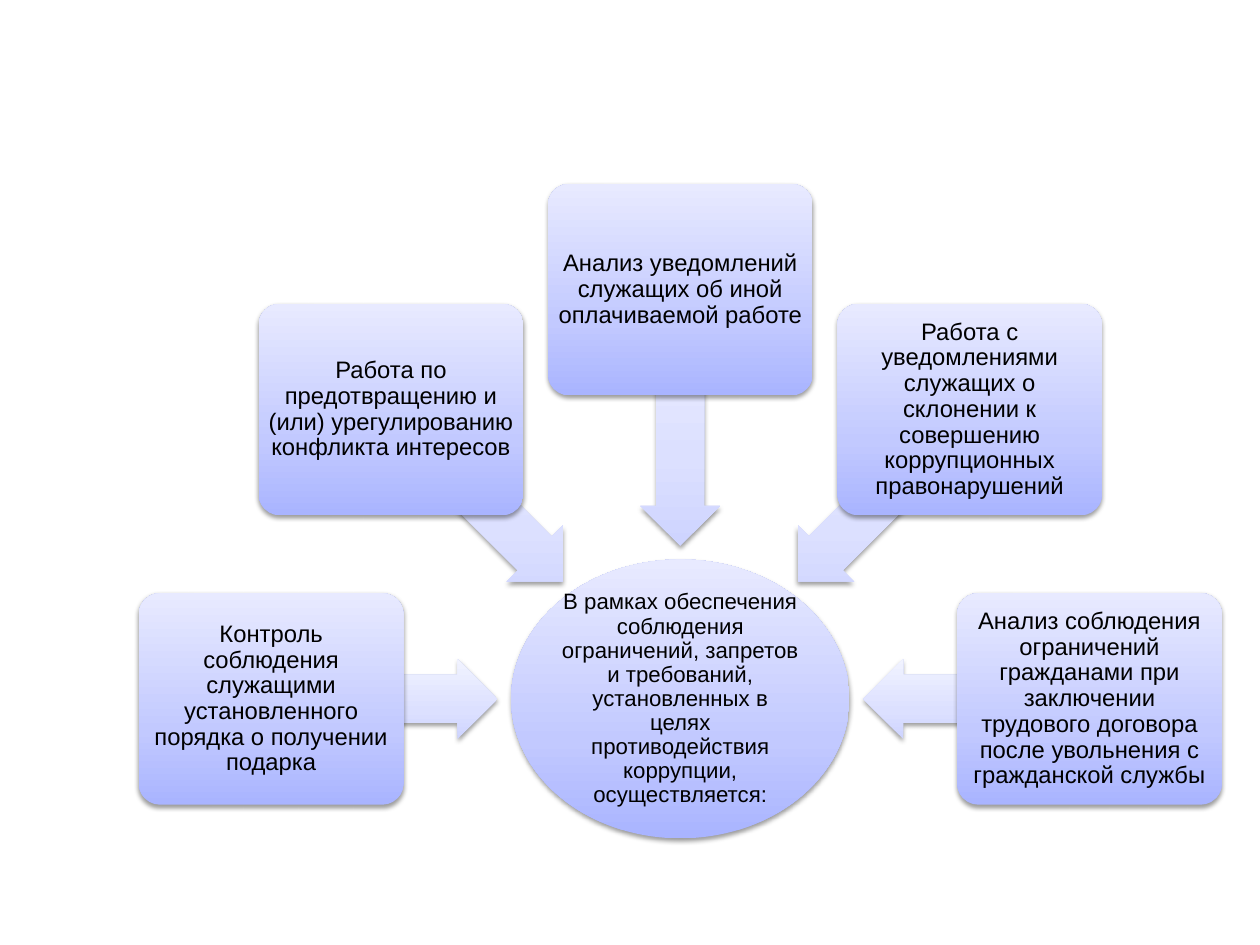
"""Builds a slide of five duties that converge on one central purpose."""
from dataclasses import dataclass
from math import cos, hypot, radians, sin

from lxml import etree
from pptx import Presentation
from pptx import util as u
from pptx.dml.color import RGBColor
from pptx.enum import shapes, text
from pptx.oxml import ns

SLIDE_WIDTH, SLIDE_HEIGHT = u.Cm(28), u.Cm(21)
CELL = u.Inches(0.1)
HUB_X, HUB_Y = 59.52, 61.15
HUB_SIZE = (29.6, 24.4)
CARD_SIZE = (23.16, 18.5)
ORBIT = 35.8
ARROW_HEIGHT = 7
ARROW_GAP = 1.2

PURPOSE = (
    "В рамках обеспечения соблюдения ограничений, запретов и требований, "
    "установленных в целях противодействия коррупции, осуществляется:"
)
DUTIES = (
    "Контроль соблюдения служащими установленного порядка о получении подарка",
    "Работа по предотвращению и (или) урегулированию конфликта интересов",
    "Анализ уведомлений служащих об иной оплачиваемой работе",
    "Работа с уведомлениями служащих о склонении к совершению "
    "коррупционных правонарушений",
    "Анализ соблюдения ограничений гражданами при заключении трудового "
    "договора после увольнения с гражданской службы",
)


@dataclass(frozen=True)
class Theme:
    """Colours and type of the slide."""

    font: str = "Arial"
    ink: str = "000000"
    hub_size: int = 14
    card_size: int = 15
    solid: tuple = ("A9B4FF", "C2C9FF", "E8EAFF")
    pale: tuple = ("CED4FF", "DCE0FF", "F1F3FF")
    stops: tuple = (0, 35, 100)


THEME = Theme()


def add_effects(shape, colours):
    """Give a shape an upward gradient and a soft shadow below it."""
    stops = "".join(
        f'<a:gs pos="{stop * 1000}"><a:srgbClr val="{colour}"/></a:gs>'
        for stop, colour in zip(THEME.stops, colours)
    )
    gradient = (
        f'<a:gradFill {ns.nsdecls("a")} rotWithShape="0">'
        f'<a:gsLst>{stops}</a:gsLst><a:lin ang="16200000" scaled="0"/></a:gradFill>'
    )
    shadow = (
        f'<a:effectLst {ns.nsdecls("a")}>'
        f'<a:outerShdw blurRad="{u.Pt(3.1)}" dist="{u.Pt(1.6)}" dir="5400000" '
        f'rotWithShape="0"><a:srgbClr val="{THEME.ink}"><a:alpha val="38000"/>'
        "</a:srgbClr></a:outerShdw></a:effectLst>"
    )
    shape.line.fill.background()
    properties = shape._element.spPr
    properties.find(ns.qn("a:ln")).addprevious(etree.fromstring(gradient))
    properties.append(etree.fromstring(shadow))


def add_block(slide, kind, centre, size, colours, adjustments=()):
    """Add a shaded preset shape around a centre given in grid cells."""
    corner = [middle - length / 2 for middle, length in zip(centre, size)]
    box = [round(value * CELL) for value in (*corner, *size)]
    shape = slide.shapes.add_shape(kind, *box)
    for index, value in enumerate(adjustments):
        shape.adjustments[index] = value
    add_effects(shape, colours)
    return shape


def write(shape, wording, *, size, inset):
    """Write centred text inside a shape, with its inset in points."""
    frame = shape.text_frame
    frame.word_wrap = True
    frame.vertical_anchor = text.MSO_ANCHOR.MIDDLE
    frame.margin_left = frame.margin_right = u.Pt(inset)
    frame.margin_top = frame.margin_bottom = u.Pt(inset)
    paragraph = frame.paragraphs[0]
    paragraph.alignment = text.PP_ALIGN.CENTER
    paragraph.line_spacing = 0.9
    run = paragraph.add_run()
    run.text = wording
    run.font.name = THEME.font
    run.font.size = u.Pt(size)
    run.font.color.rgb = RGBColor.from_string(THEME.ink)


def orbit_point(angle, radius):
    """Return the grid point at an angle and distance from the hub."""
    turn = radians(angle)
    return HUB_X + radius * cos(turn), HUB_Y + radius * sin(turn)


def add_hub(slide):
    """Add the central ellipse."""
    hub = add_block(slide, shapes.MSO_SHAPE.OVAL, (HUB_X, HUB_Y), HUB_SIZE, THEME.solid)
    write(hub, PURPOSE, size=THEME.hub_size, inset=0.7)


def add_arrow(slide, angle):
    """Add an arrow from a card's centre to just outside the hub."""
    turn = radians(angle)
    width, height = HUB_SIZE
    hub_edge = 0.5 / hypot(cos(turn) / width, sin(turn) / height)
    length = ORBIT - hub_edge - ARROW_GAP
    arrow = add_block(
        slide,
        shapes.MSO_SHAPE.LEFT_ARROW,
        orbit_point(angle, ORBIT - length / 2),
        (length, ARROW_HEIGHT),
        THEME.pale,
        (0.6, 0.5),
    )
    arrow.rotation = angle % 360


def add_card(slide, angle, duty):
    """Add a rounded card with one duty."""
    card = add_block(
        slide,
        shapes.MSO_SHAPE.ROUNDED_RECTANGLE,
        orbit_point(angle, ORBIT),
        CARD_SIZE,
        THEME.solid,
        (0.1,),
    )
    write(card, duty, size=THEME.card_size, inset=2.25)


def main():
    """Build and save the presentation."""
    presentation = Presentation()
    presentation.slide_width = SLIDE_WIDTH
    presentation.slide_height = SLIDE_HEIGHT
    slide = presentation.slides.add_slide(presentation.slide_layouts[6])
    add_hub(slide)
    for index, duty in enumerate(DUTIES):
        angle = 180 + 45 * index
        add_arrow(slide, angle)
        add_card(slide, angle, duty)
    presentation.save("out.pptx")


if __name__ == "__main__":
    main()
